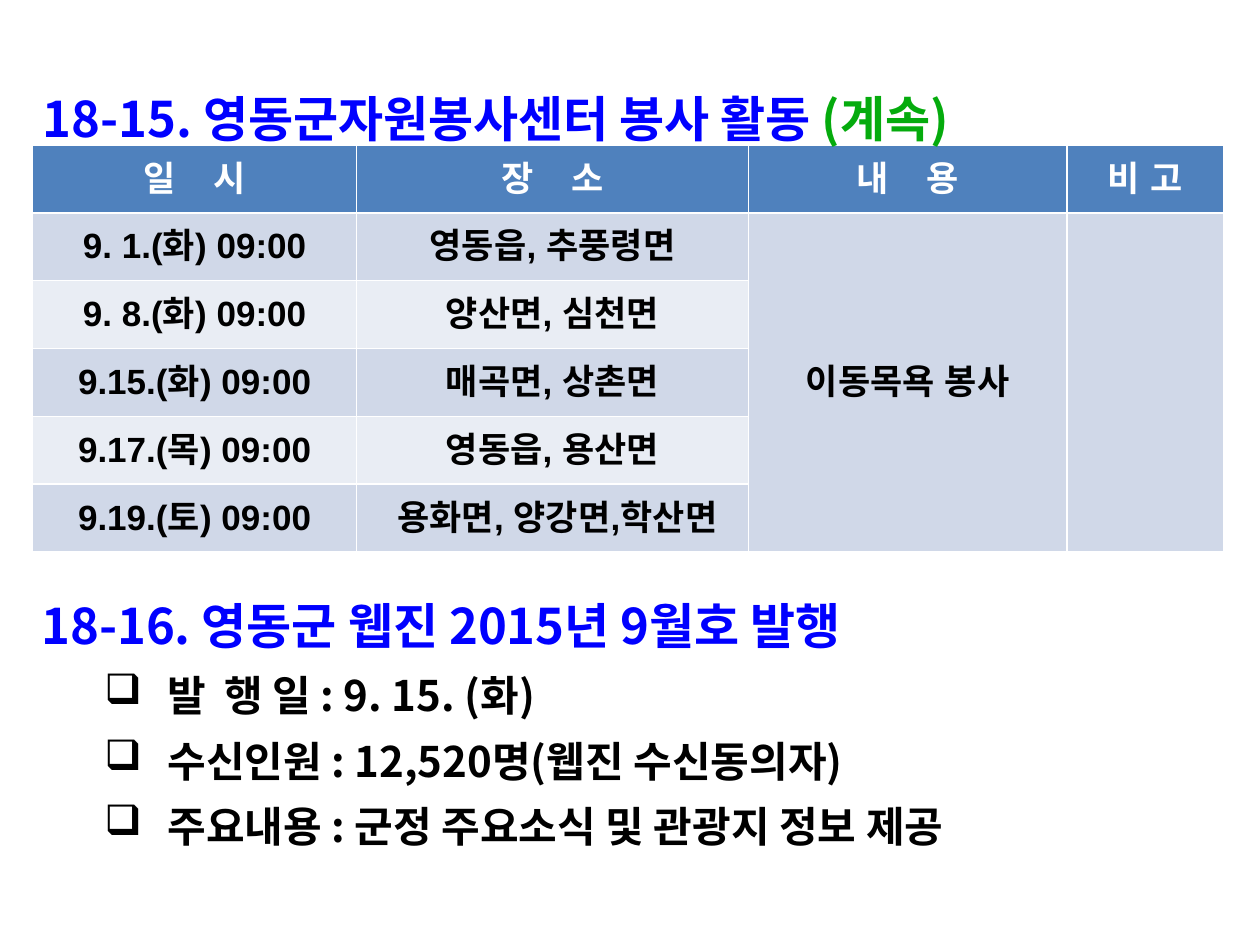
from lxml.etree import SubElement
from pptx import Presentation
from pptx.dml.color import RGBColor
from pptx.enum.text import MSO_ANCHOR, PP_ALIGN
from pptx.oxml.ns import qn
from pptx.util import Pt

BLUE, GREEN, BLACK, WHITE = "0000FF", "05AB0D", "000000", "FFFFFF"
HEAD, DARK, LIGHT = "4F81BD", "D0D8E8", "E9EDF4"
SANS = "Noto Sans CJK KR"


def color(code):
    return RGBColor.from_string(code)


def write(para, text, size, face, code, gap=0):
    """Fill a paragraph; gap widens the first space by that many points."""
    first, space, rest = text.partition(" ")
    if gap:
        run = para.add_run()
        run.text = first + space
        # Spacing follows both the first letter and the space
        run.font._element.set("spc", str(gap * 50))
        text = rest
    para.add_run().text = text
    font = para.font
    font.size, font.bold, font.name = Pt(size), True, face
    font.color.rgb = color(code)
    SubElement(font._element, qn("a:ea"), typeface=face)


deck = Presentation()
deck.slide_width, deck.slide_height = Pt(720), Pt(540)
slide = deck.slides.add_slide(deck.slide_layouts[6])

# Schedule table
heads = [("일 시", 16), ("장 소", 16), ("내 용", 16), ("비 고", 0)]
visits = [
    ("9. 1.(화) 09:00", "영동읍, 추풍령면"),
    ("9. 8.(화) 09:00", "양산면, 심천면"),
    ("9.15.(화) 09:00", "매곡면, 상촌면"),
    ("9.17.(목) 09:00", "영동읍, 용산면"),
    ("9.19.(토) 09:00", "용화면, 양강면,학산면"),
]
table = slide.shapes.add_table(6, 4, Pt(18.7), Pt(82.8), Pt(680.4), Pt(232.8)).table
for col, width in zip(table.columns, (185, 224, 182, 89.4)):
    col.width = Pt(width)
for row in table.rows:
    row.height = Pt(38.8)

for r in range(6):
    for c in range(4):
        cell = table.cell(r, c)
        cell.vertical_anchor = MSO_ANCHOR.MIDDLE
        cell.fill.solid()
        shade = HEAD if r == 0 else DARK if r % 2 or c > 1 else LIGHT
        cell.fill.fore_color.rgb = color(shade)
        para = cell.text_frame.paragraphs[0]
        para.alignment = PP_ALIGN.CENTER
        if r == 0:
            text, gap = heads[c]
            write(para, text, 20, "Arial", WHITE, gap)
        elif c < 2:
            write(para, visits[r - 1][c], 20, "Arial", BLACK)
        elif r == 1 and c == 2:
            write(para, "이동목욕 봉사", 20, "Arial", BLACK)
for c in (2, 3):
    table.cell(1, c).merge(table.cell(5, c))
last = table.cell(5, 1)
last.margin_left, last.margin_right = Pt(10), Pt(4.5)

# Volunteer heading
frame = slide.shapes.add_textbox(Pt(17.3), Pt(30.2), Pt(675.4), Pt(58.3)).text_frame
frame.word_wrap = True
para = frame.paragraphs[0]
para.line_spacing = 1.5
write(para, "18-15. 영동군자원봉사센터 봉사 활동", 28, SANS, BLUE)
more = para.add_run()
more.text = " (계속)"
more.font.color.rgb = color(GREEN)

# Webzine heading and points
frame = slide.shapes.add_textbox(Pt(16.6), Pt(326.9), Pt(590.4), Pt(164.9)).text_frame
frame.word_wrap = True
para = frame.paragraphs[0]
para.line_spacing = 1.3
write(para, "18-16. 영동군 웹진 2015년 9월호 발행", 28, SANS, BLUE)
points = [
    ("발 행 일 : 9. 15. (화)", 5),
    ("수신인원 : 12,520명(웹진 수신동의자)", 0),
    ("주요내용 : 군정 주요소식 및 관광지 정보 제공", 0),
]
for text, gap in points:
    para = frame.add_paragraph()
    para.level = 1
    props = para._p.get_or_add_pPr()
    props.set("marL", str(Pt(72)))
    props.set("indent", str(Pt(-36)))
    tint = SubElement(props, qn("a:buClr"))
    SubElement(tint, qn("a:srgbClr"), val=BLACK)
    SubElement(props, qn("a:buChar"), char="❑")
    para.line_spacing = 1.3
    write(para, text, 24, SANS, BLACK, gap)

deck.save("out.pptx")
